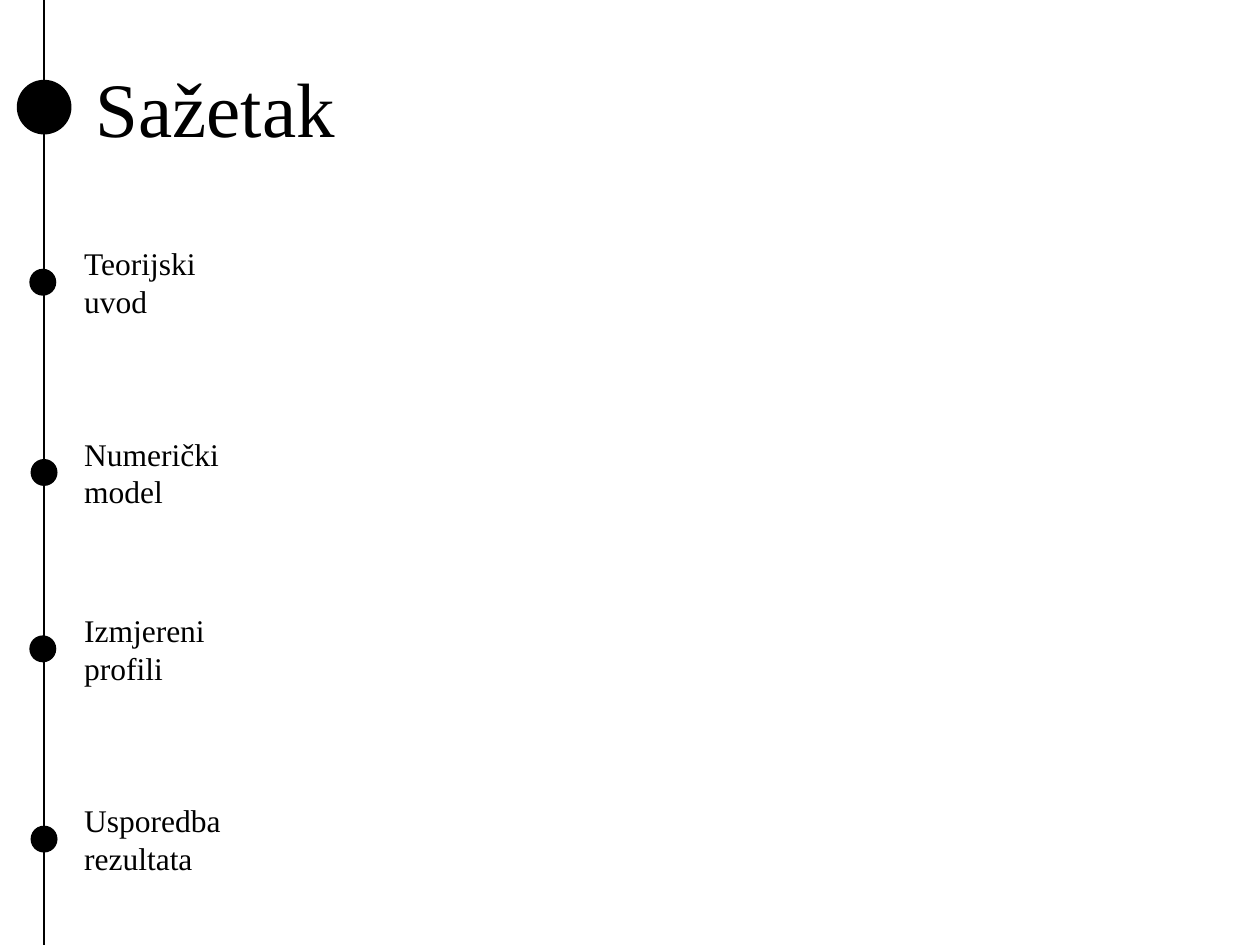
from lxml import etree
from pptx import Presentation
from pptx.dml.color import RGBColor
from pptx.enum import shapes, text
from pptx.oxml.ns import qn
from pptx.util import Inches, Pt

COLORS = {"ink": "000000", "paper": "FFFFFF"}
FONT = "Times New Roman"
TITLE = "Sažetak"
# topic, label top, label width, dot left
TOPICS = [
    ("Teorijski uvod", 1.89, 1.55, 0.24),
    ("Numerički model", 3.4, 1.41, 0.25),
    ("Izmjereni profili", 4.8, 1.41, 0.24),
    ("Usporedba rezultata", 6.31, 1.41, 0.25),
]
LABEL_LEFT, LABEL_HEIGHT = 0.57, 0.71
DOT_SIZE, DOT_DROP = 0.2, 0.25
INK = RGBColor.from_string(COLORS["ink"])

prs = Presentation()
prs.slide_width, prs.slide_height = Inches(10), Inches(7.5)
slide = prs.slides.add_slide(prs.slide_layouts[6])
slide.background.fill.solid()
slide.background.fill.fore_color.rgb = RGBColor.from_string(COLORS["paper"])


def add_label(words, left, top, width, height, size):
    label = slide.shapes.add_textbox(*map(Inches, (left, top, width, height)))
    frame = label.text_frame
    frame.word_wrap = True
    frame.text = words
    font = frame.paragraphs[0].runs[0].font
    font.name, font.size, font.color.rgb = FONT, Pt(size), INK
    return frame


def add_dot(left, top, size):
    dot = slide.shapes.add_shape(
        shapes.MSO_SHAPE.OVAL, *map(Inches, (left, top, size, size)))
    dot.shadow.inherit = False
    dot.fill.solid()
    dot.fill.fore_color.rgb = INK
    dot.line.color.rgb = INK
    dot.line.width = Pt(1)


# Timeline
timeline = slide.shapes.add_connector(
    shapes.MSO_CONNECTOR.STRAIGHT, *map(Inches, (0.35, -0.2, 0.35, 9.04)))
timeline.line.color.rgb = INK
timeline.line.width = Pt(1.5)
etree.SubElement(timeline._element.spPr, qn("a:effectLst"))

# Title and its large dot
title = add_label(TITLE, 0.66, 0.49, 2.16, 0.78, 44)
title.vertical_anchor = text.MSO_ANCHOR.BOTTOM
title.paragraphs[0].line_spacing = 0.9
title.paragraphs[0].space_before = Pt(10)
add_dot(0.14, 0.64, 0.42)

# Topics along the timeline
for topic, top, width, dot_left in TOPICS:
    frame = add_label(topic, LABEL_LEFT, top, width, LABEL_HEIGHT, 18)
    frame.auto_size = text.MSO_AUTO_SIZE.SHAPE_TO_FIT_TEXT
for topic, top, width, dot_left in TOPICS:
    add_dot(dot_left, top + DOT_DROP, DOT_SIZE)

prs.save("out.pptx")
